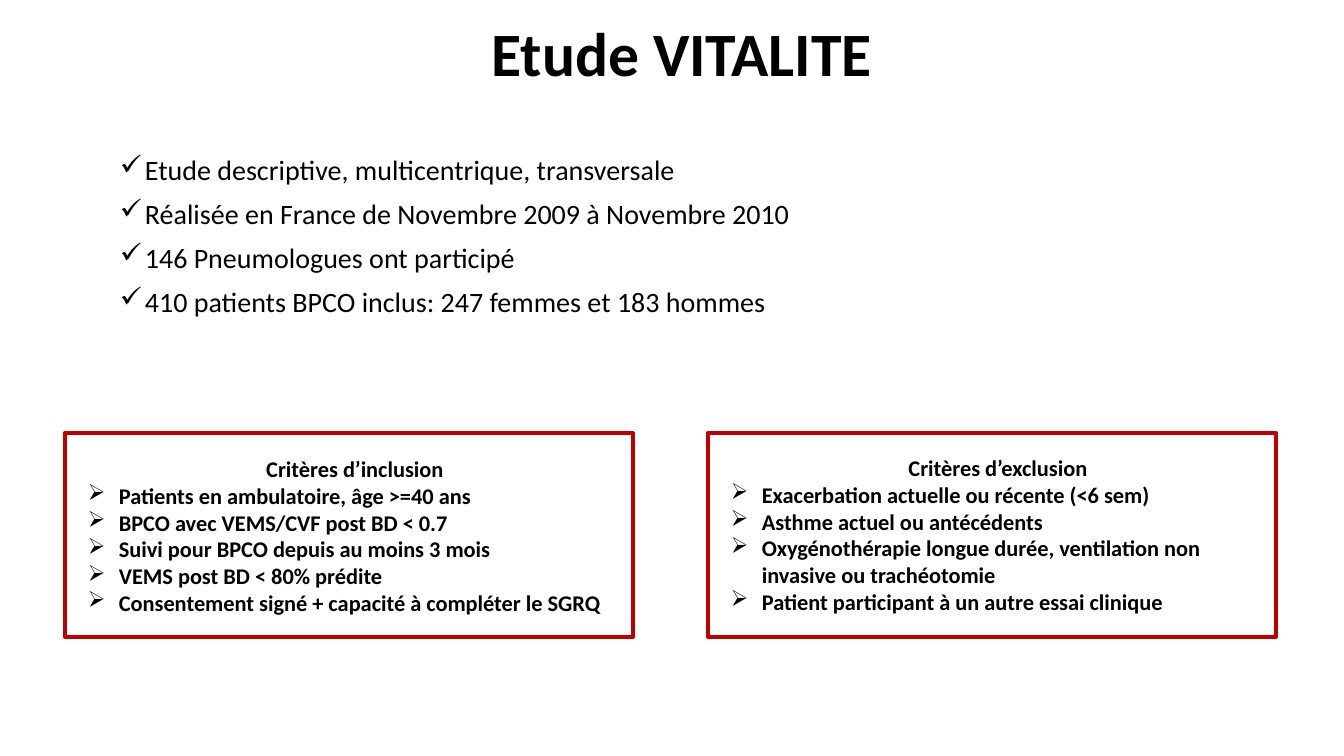
from lxml.etree import SubElement
from pptx import Presentation
from pptx.dml.color import RGBColor
from pptx.enum.shapes import MSO_SHAPE as SHAPE
from pptx.enum.text import MSO_ANCHOR as ANCHOR, PP_ALIGN as ALIGN
from pptx.oxml.ns import qn
from pptx.util import Pt

COLORS = {"ink": "000000", "paper": "FFFFFF", "edge": "C00000"}
PX = 914400 / 100.8


def px(*nums):
    """Turn pixel lengths into EMU."""
    return [round(n * PX) for n in nums]


def write(para, text, size, bold=False, align=ALIGN.LEFT, line=1.0,
          before=0, bullet=None, indent=0):
    """Fill one paragraph; indent is the hanging indent of its bullet in px."""
    para.alignment = align
    para.line_spacing = line
    para.space_before = Pt(before)
    run = para.add_run()
    run.text = text
    run.font.name = "Calibri"
    run.font.size = Pt(size)
    run.font.bold = bold
    run.font.color.rgb = RGBColor.from_string(COLORS["ink"])
    if bullet:
        props = para._p.get_or_add_pPr()
        hang = px(indent)[0]
        props.set("marL", str(hang))
        props.set("indent", str(-hang))
        tint = SubElement(props, qn("a:buClr"))
        SubElement(tint, qn("a:srgbClr"), val=COLORS["ink"])
        SubElement(props, qn("a:buChar"), char=bullet)


deck = Presentation()
deck.slide_width, deck.slide_height = px(1344, 756)
slide = deck.slides.add_slide(deck.slide_layouts[6])
shapes = slide.shapes

# Title
frame = shapes.add_textbox(*px(105, 10, 1154, 93)).text_frame
frame.word_wrap = True
frame.vertical_anchor = ANCHOR.MIDDLE
write(frame.paragraphs[0], "Etude VITALITE", 44, bold=True,
      align=ALIGN.CENTER, line=0.9)

# Study facts
facts = [
    "Etude descriptive, multicentrique, transversale",
    "Réalisée en France de Novembre 2009 à Novembre 2010",
    "146 Pneumologues ont participé",
    "410 patients BPCO inclus: 247 femmes et 183 hommes",
]
frame = shapes.add_textbox(*px(110, 151, 1091, 225)).text_frame
frame.word_wrap = True
for i, fact in enumerate(facts):
    para = frame.add_paragraph() if i else frame.paragraphs[0]
    write(para, fact, 20, line=0.9, before=10 if i else 0,
          bullet="✓", indent=25)

# Criteria boxes: left, top of text, heading, items
panels = [
    (65, 450, "Critères d’inclusion", [
        "Patients en ambulatoire, âge >=40 ans",
        "BPCO avec VEMS/CVF post BD < 0.7",
        "Suivi pour BPCO depuis au moins 3 mois",
        "VEMS post BD < 80% prédite",
        "Consentement signé + capacité à compléter le SGRQ",
    ]),
    (708, 449, "Critères d’exclusion", [
        "Exacerbation actuelle ou récente (<6 sem)",
        "Asthme actuel ou antécédents",
        "Oxygénothérapie longue durée, ventilation non invasive "
        "ou trachéotomie",
        "Patient participant à un autre essai clinique",
    ]),
]
for left, top, head, items in panels:
    box = shapes.add_shape(SHAPE.RECTANGLE, *px(left, 433, 568, 204))
    box.shadow.inherit = False
    box.fill.solid()
    box.fill.fore_color.rgb = RGBColor.from_string(COLORS["paper"])
    box.line.color.rgb = RGBColor.from_string(COLORS["edge"])
    box.line.width = Pt(3)

    frame = shapes.add_textbox(*px(left + 13, top, 554, 173)).text_frame
    frame.word_wrap = True
    write(frame.paragraphs[0], head, 16, bold=True, align=ALIGN.CENTER)
    for item in items:
        write(frame.add_paragraph(), item, 16, bold=True,
              bullet="➢", indent=31)

deck.save("out.pptx")
